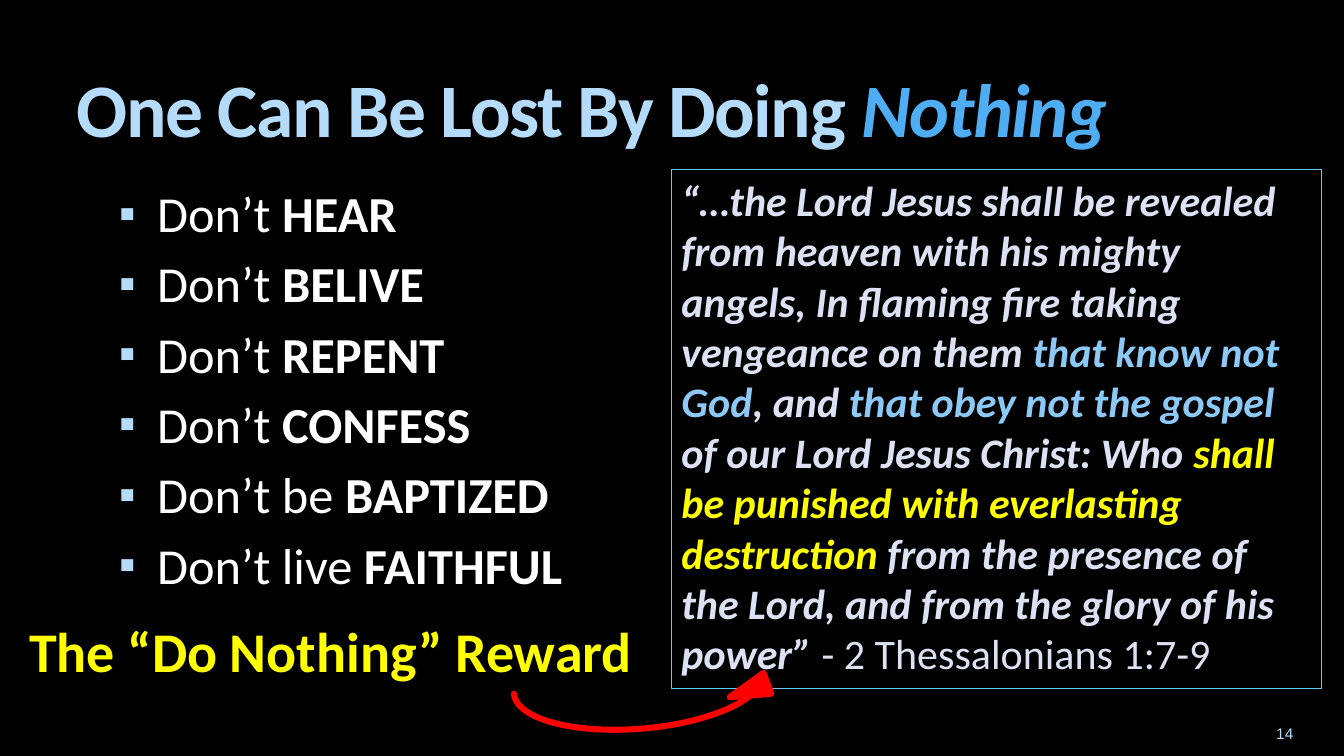
from lxml import etree
from pptx import Presentation
from pptx.dml.color import RGBColor
from pptx.enum.shapes import MSO_SHAPE
from pptx.enum.text import MSO_ANCHOR, PP_ALIGN
from pptx.oxml.ns import qn
from pptx.util import Inches, Pt

RECTANGLE = MSO_SHAPE.RECTANGLE
CURVED_ARROW = MSO_SHAPE.CURVED_RIGHT_ARROW
TOP, MIDDLE, BOTTOM = MSO_ANCHOR.TOP, MSO_ANCHOR.MIDDLE, MSO_ANCHOR.BOTTOM
LEFT, CENTER = PP_ALIGN.LEFT, PP_ALIGN.CENTER

WIDTH, HEIGHT = 13.33, 7.5
BLACK, WHITE, YELLOW, RED = "000000", "FFFFFF", "FFFF00", "FF0000"
PALE_BLUE, BRIGHT_BLUE, SKY = "B4DCFA", "4FADF3", "8CC9F7"
LAVENDER, FRAME = "DCE1F4", "5ECCF3"

STEPS = [
    ("Don’t ", "HEAR"),
    ("Don’t ", "BELIVE"),
    ("Don’t ", "REPENT"),
    ("Don’t ", "CONFESS"),
    ("Don’t be ", "BAPTIZED"),
    ("Don’t live ", "FAITHFUL"),
]
VERSE = [
    ("“…the Lord Jesus shall be revealed from heaven with his mighty angels, "
     "In flaming fire taking vengeance on them ", LAVENDER),
    ("that know not God", SKY),
    (", and ", LAVENDER),
    ("that obey not the gospel", SKY),
    (" of our Lord Jesus Christ: Who ", LAVENDER),
    ("shall be punished with everlasting destruction", YELLOW),
    (" from the presence of the Lord, and from the glory of his power” ", LAVENDER),
]
CITATION = "- 2 Thessalonians 1:7-9"


def color(hex_value):
    return RGBColor.from_string(hex_value)


def set_font(target, size, hex_value, bold=None, name="Calibri"):
    target.font.name = name
    target.font.size = Pt(size)
    target.font.bold = bold
    target.font.color.rgb = color(hex_value)


def add_run(paragraph, text, hex_value=None, bold=None, italic=None):
    run = paragraph.add_run()
    run.text = text
    run.font.bold = bold
    run.font.italic = italic
    if hex_value:
        run.font.color.rgb = color(hex_value)
    return run


def text_area(slide, box, anchor=TOP):
    area = slide.shapes.add_textbox(*map(Inches, box)).text_frame
    area.word_wrap = True
    area.vertical_anchor = anchor
    return area


def add_bullet(paragraph):
    properties = paragraph._p.get_or_add_pPr()
    properties.set("marL", str(Inches(0.45)))
    properties.set("indent", str(Inches(-0.38)))
    bullet_color = etree.SubElement(properties, qn("a:buClr"))
    etree.SubElement(bullet_color, qn("a:srgbClr"), val=PALE_BLUE)
    etree.SubElement(properties, qn("a:buSzPct"), val="95000")
    etree.SubElement(properties, qn("a:buFont"), typeface="Arial")
    etree.SubElement(properties, qn("a:buChar"), char="▪")


def heading(slide, box):
    title = text_area(slide, box, MIDDLE).paragraphs[0]
    set_font(title, 54, PALE_BLUE, True)
    opening = add_run(title, "One Can Be Lost By Doing ")
    nothing = add_run(title, "Nothing", BRIGHT_BLUE, italic=True)
    for run in (opening, nothing):
        run.font._element.set("spc", "-100")


def neglected_steps(slide, box):
    area = text_area(slide, box)
    for index, (neglect, step) in enumerate(STEPS):
        line = area.add_paragraph() if index else area.paragraphs[0]
        if index:
            line.space_before = Pt(7)
        add_bullet(line)
        set_font(line, 36, WHITE)
        add_run(line, neglect)
        add_run(line, step, bold=True)


def scripture(slide, box):
    frame = slide.shapes.add_shape(RECTANGLE, *map(Inches, box))
    frame.shadow.inherit = False
    frame.fill.background()
    frame.line.color.rgb = color(FRAME)
    frame.line.width = Pt(0.75)
    area = frame.text_frame
    area.word_wrap = True
    area.vertical_anchor = TOP
    passage = area.paragraphs[0]
    passage.alignment = LEFT
    set_font(passage, 30, LAVENDER)
    for words, hex_value in VERSE:
        add_run(passage, words, hex_value, True, True)
    add_run(passage, CITATION, LAVENDER)


def reward(slide, box):
    left, top, width, height = box
    label = text_area(slide, box).paragraphs[0]
    label.alignment = CENTER
    set_font(label, 40, YELLOW, True)
    add_run(label, "The “Do Nothing” Reward")

    arrow_box = (left + 0.95 * width, top - 0.42, 0.45, 2.69)
    arrow = slide.shapes.add_shape(CURVED_ARROW, *map(Inches, arrow_box))
    arrow.shadow.inherit = False
    arrow.rotation = 265.2
    for index, share in enumerate((0, 0.921, 0.471)):
        arrow.adjustments[index] = share
    arrow.fill.solid()
    arrow.fill.fore_color.rgb = color(RED)
    arrow.line.color.rgb = color(RED)
    arrow.line.width = Pt(4.33)


def page_number(slide, box):
    number = text_area(slide, box, BOTTOM).paragraphs[0]
    set_font(number, 11, PALE_BLUE, name="Arial")
    add_run(number, "14")


def main():
    deck = Presentation()
    deck.slide_width, deck.slide_height = Inches(WIDTH), Inches(HEIGHT)
    slide = deck.slides.add_slide(deck.slide_layouts[6])
    slide.background.fill.solid()
    slide.background.fill.fore_color.rgb = color(BLACK)
    heading(slide, (0.66, 0.56, 12.01, 1))
    neglected_steps(slide, (1.01, 1.76, 5.45, 5))
    page_number(slide, (12.56, 7.02, 0.67, 0.4))
    scripture(slide, (6.66, 1.68, 6.45, 5.15))
    reward(slide, (0, 6.07, 6.56, 0.77))
    deck.save("out.pptx")


if __name__ == "__main__":
    main()
